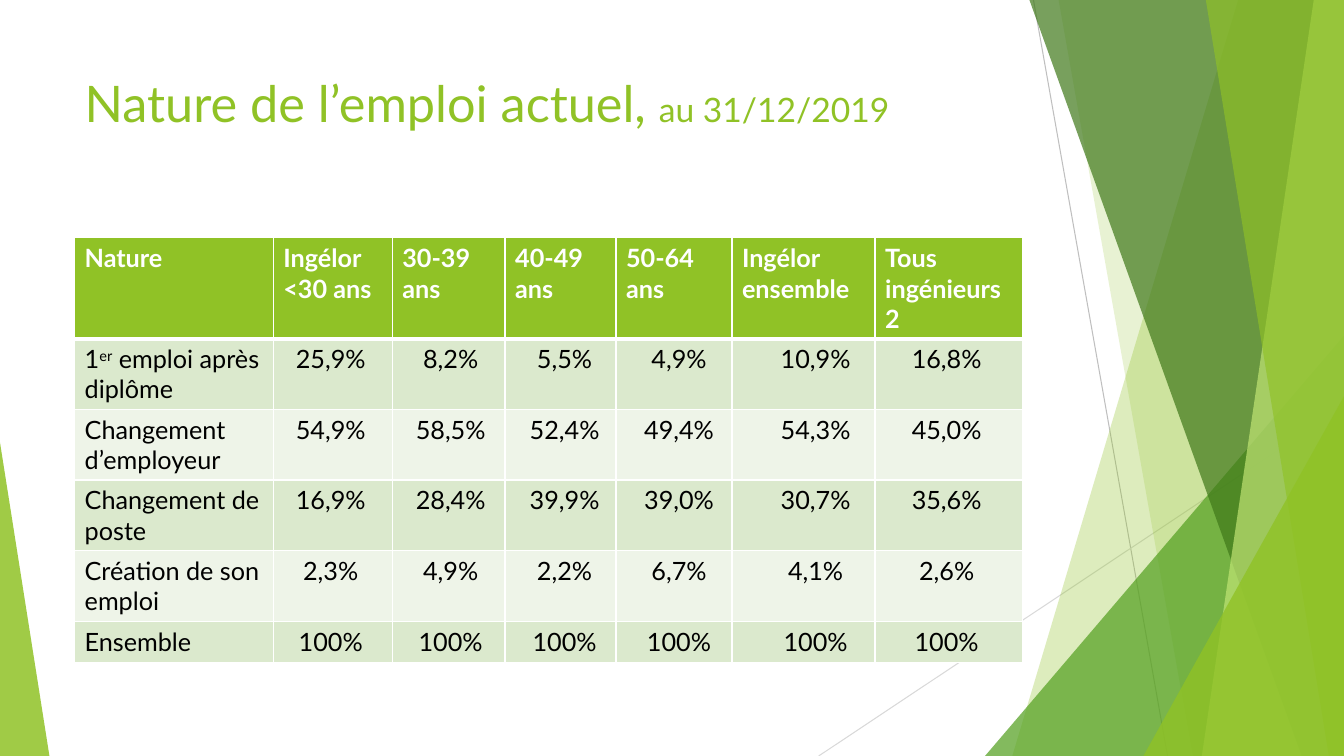
from lxml import etree
from pptx import Presentation
from pptx import util as u
from pptx.dml.color import RGBColor
from pptx.enum import shapes, text
from pptx.oxml import ns

LIME = RGBColor(0x90, 0xC2, 0x26)
GREEN = RGBColor(0x54, 0xA0, 0x21)
FOREST = RGBColor(0x3F, 0x78, 0x19)
PALE = RGBColor(0xC0, 0xE4, 0x74)
BAND = RGBColor(0xDB, 0xE9, 0xCD)
LIGHT = RGBColor(0xEE, 0xF4, 0xE8)
GREY = RGBColor(0xBF, 0xBF, 0xBF)
SILVER = RGBColor(0xD9, 0xD9, 0xD9)
WHITE = RGBColor(0xFF, 0xFF, 0xFF)
BLACK = RGBColor(0, 0, 0)
WIDE, HIGH = 13.33, 7.5

HEADS = ["Nature", "Ingélor <30 ans", "30-39 ans", "40-49 ans", "50-64 ans",
         "Ingélor ensemble", "Tous ingénieurs2"]
ROWS = [
    ["1er emploi après diplôme", "25,9%", "8,2%", "5,5%", "4,9%", "10,9%", "16,8%"],
    ["Changement d’employeur", "54,9%", "58,5%", "52,4%", "49,4%", "54,3%", "45,0%"],
    ["Changement de poste", "16,9%", "28,4%", "39,9%", "39,0%", "30,7%", "35,6%"],
    ["Création de son emploi", "2,3%", "4,9%", "2,2%", "6,7%", "4,1%", "2,6%"],
    ["Ensemble"] + ["100%"] * 6,
]
WIDTHS = [1.97, 1.18, 1.12, 1.1, 1.15, 1.42, 1.46]
HEIGHTS = [0.99] + [0.7] * 4 + [0.41]
INSETS = [0.1, 0.06, 0.14, 0.18, 0.2, 0.34, 0.06]


class Deck:
    font = "Lato"

    def __init__(self):
        self.file = Presentation()
        self.file.slide_width = u.Inches(WIDE)
        self.file.slide_height = u.Inches(HIGH)
        self.slide = self.file.slides.add_slide(self.file.slide_layouts[5])

    def style(self, run, size, color, bold=False):
        run.font.name = self.font
        run.font.size = u.Pt(size)
        run.font.bold = bold
        run.font.color.rgb = color

    def paint(self, shape, color, alpha):
        shape.shadow.inherit = False
        shape.line.fill.background()
        shape.fill.solid()
        shape.fill.fore_color.rgb = color
        tint = shape._element.spPr.xpath("./a:solidFill/a:srgbClr")[0]
        etree.SubElement(tint, ns.qn("a:alpha"), val=str(alpha * 1000))

    def line(self, start, end, color):
        ends = [u.Inches(n) for n in start + end]
        line = self.slide.shapes.add_connector(shapes.MSO_CONNECTOR.STRAIGHT, *ends)
        line.line.color.rgb = color
        line.line.width = u.Pt(0.75)
        etree.SubElement(line._element.spPr, ns.qn("a:effectLst"))

    def shard(self, top, foot, color, alpha):
        points = [(WIDE, 0), (WIDE, HIGH), (foot, HIGH)]
        form = self.slide.shapes.build_freeform(u.Inches(top), 0)
        form.add_line_segments([(u.Inches(x), u.Inches(y)) for x, y in points])
        self.paint(form.convert_to_shape(), color, alpha)

    def wedge(self, left, top, width, tip, color, alpha):
        box = [u.Inches(n) for n in (left, top, width, HIGH - top)]
        shape = self.slide.shapes.add_shape(shapes.MSO_SHAPE.ISOSCELES_TRIANGLE, *box)
        shape.adjustments[0] = tip
        self.paint(shape, color, alpha)

    def title(self, parts):
        title = self.slide.shapes.title
        title.left, title.top = u.Inches(0.74), u.Inches(0.67)
        title.width, title.height = u.Inches(9.4), u.Inches(1.44)
        frame = title.text_frame
        frame.word_wrap = True
        frame.vertical_anchor = text.MSO_ANCHOR.TOP
        para = frame.paragraphs[0]
        para.alignment = text.PP_ALIGN.LEFT
        for words, size in parts:
            run = para.add_run()
            run.text = words
            self.style(run, size, LIME)

    def edge(self, cell, row):
        sides = {"L": 1, "R": 1, "T": 3 if row == 1 else 1, "B": 3 if row == 0 else 1}
        props = cell._tc.get_or_add_tcPr()
        for spot, (side, width) in enumerate(sides.items()):
            line = etree.Element(ns.qn("a:ln" + side), w=str(u.Pt(width)))
            fill = etree.SubElement(line, ns.qn("a:solidFill"))
            etree.SubElement(fill, ns.qn("a:srgbClr"), val=str(WHITE))
            props.insert(spot, line)

    def cell(self, cell, words, row, col):
        head = row == 0
        para = cell.text_frame.paragraphs[0]
        parts = ["1", "er", words[3:]] if words.startswith("1er") else [words]
        for part in parts:
            run = para.add_run()
            run.text = part
            self.style(run, 18, WHITE if head else BLACK, head)
            if part == "er":
                run._r.get_or_add_rPr().set("baseline", "30000")
        if col and not head:
            para.alignment = text.PP_ALIGN.CENTER
            cell.margin_left = u.Inches(INSETS[col])
        cell.fill.solid()
        cell.fill.fore_color.rgb = LIME if head else BAND if row % 2 else LIGHT
        self.edge(cell, row)

    def table(self, rows):
        box = [u.Inches(n) for n in (0.74, 2.36, sum(WIDTHS), sum(HEIGHTS))]
        table = self.slide.shapes.add_table(len(rows), len(WIDTHS), *box).table
        for col, width in zip(table.columns, WIDTHS):
            col.width = u.Inches(width)
        for row, height in zip(table.rows, HEIGHTS):
            row.height = u.Inches(height)
        for r, row in enumerate(rows):
            for c, words in enumerate(row):
                self.cell(table.cell(r, c), words, r, c)


def main():
    deck = Deck()
    deck.line((10.25, 0), (11.58, HIGH), GREY)
    deck.line((WIDE, 4.03), (8.12, HIGH), SILVER)
    deck.shard(12.28, 10.04, LIME, 30)
    deck.shard(10.5, 11.83, LIME, 20)
    deck.wedge(9.77, 3.33, 3.56, 1, GREEN, 72)
    deck.shard(10.21, 12.91, FOREST, 70)
    deck.shard(13.03, 11.92, PALE, 70)
    deck.shard(11.96, 13.18, LIME, 65)
    deck.wedge(11.34, 3.93, 1.99, 1, LIME, 80)
    deck.wedge(0, 4.39, 0.49, 0, LIME, 85)
    deck.title([("Nature de l’emploi actuel, ", 36), ("au 31/12/2019", 24)])
    deck.table([HEADS] + ROWS)
    deck.file.save("out.pptx")


if __name__ == "__main__":
    main()
